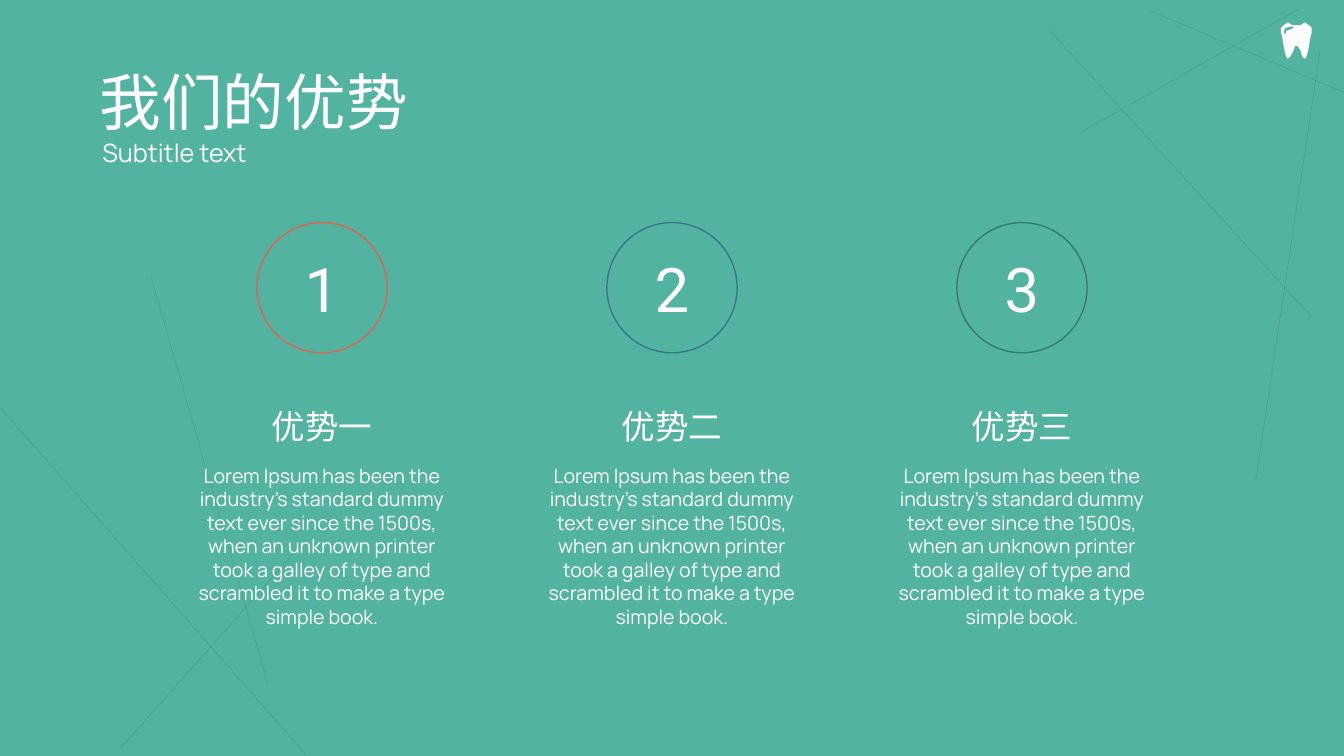
from dataclasses import dataclass

from lxml import etree
from pptx import Presentation
from pptx.dml.color import RGBColor
from pptx.enum.shapes import MSO_CONNECTOR, MSO_SHAPE
from pptx.enum.text import MSO_ANCHOR, MSO_AUTO_SIZE, PP_ALIGN
from pptx.oxml.ns import qn
from pptx.util import Pt

STRAIGHT = MSO_CONNECTOR.STRAIGHT
OVAL = MSO_SHAPE.OVAL
TOP, MIDDLE, BOTTOM = MSO_ANCHOR.TOP, MSO_ANCHOR.MIDDLE, MSO_ANCHOR.BOTTOM
LEFT, CENTER = PP_ALIGN.LEFT, PP_ALIGN.CENTER
NO_FIT = MSO_AUTO_SIZE.NONE

TITLE = "我们的优势"
SUBTITLE = "Subtitle text"
BODY = ("Lorem Ipsum has been the industry's standard dummy text ever since "
        "the 1500s, when an unknown printer took a galley of type and "
        "scrambled it to make a type simple book.")
ADVANTAGES = [  # number, heading, ring colour
    ("1", "优势一", "DE644F"),
    ("2", "优势二", "3B758A"),
    ("3", "优势三", "367A6D"),
]
DECOR_LINES = [  # x1, y1, x2, y2
    (0, 291, 219.4, 540),
    (108, 198, 191, 487.5),
    (211, 394, 87, 533.5),
    (749, 21, 936, 225.5),
    (820, 7, 960, 66),
    (774, 93.5, 927.5, 6.5),
    (897, 343, 943, 36),
]
TOOTH = [
    (920, 16.5), (923, 17.6), (926, 18), (929, 17.5), (932, 16.5),
    (935, 17.5), (936.7, 20), (937.2, 23), (936.5, 27), (934.8, 33),
    (934, 38), (933, 41), (931.7, 42), (930, 40.5), (928.6, 36.5),
    (927.3, 33.4), (926, 32.8), (924.8, 33.4), (923.5, 36.5),
    (922, 40.5), (920.5, 42), (919, 41), (918, 38), (917.3, 33),
    (915.6, 27), (915, 23), (915.4, 20), (917, 17.5),
]
TOOTH_SHINE = [(921.5, 18.7), (918.5, 20), (917.2, 23), (917.6, 25.2),
               (919.3, 22.5), (922, 21.2), (924.3, 20.2), (923.7, 19.2)]


@dataclass(frozen=True)
class Theme:
    background: str = "53B3A1"
    text: str = "FFFFFF"
    decor: str = "2A2A2A"
    decor_alpha: int = 20000
    latin: str = "Manrope"
    digits: str = "Roboto"
    chinese: str = "Noto Sans CJK SC"
    display: int = 44
    heading: int = 24
    subtitle: int = 18
    body: int = 14


T = Theme()
CENTER_X, PITCH = 480, 250
RING, RING_TOP = 93, 159
COLUMN = 202
HEADING_TOP, HEADING_H = 286, 36
BODY_TOP, BODY_H = 327.6, 126


def rgb(value):
    return RGBColor.from_string(value)


def write(tf, text, size, font, align=LEFT, anchor=TOP, spacing=None, after=0):
    tf.word_wrap = True
    tf.auto_size = NO_FIT
    tf.vertical_anchor = anchor
    p = tf.paragraphs[0]
    p.alignment = align
    p.line_spacing = spacing
    p.space_before, p.space_after = Pt(0), Pt(after)
    r = p.add_run()
    r.text = text
    r.font.size = Pt(size)
    r.font.name = font
    r.font.color.rgb = rgb(T.text)
    ea = etree.SubElement(r.font._element, qn("a:ea"))
    ea.set("typeface", T.chinese)


def add_text(s, box, *args, **kwargs):
    sp = s.shapes.add_textbox(*map(Pt, box))
    write(sp.text_frame, *args, **kwargs)


def add_decor_line(s, ends):
    line = s.shapes.add_connector(STRAIGHT, *map(Pt, ends))
    line.line.width = Pt(0.25)
    line.line.color.rgb = rgb(T.decor)
    sp_pr = line._element.spPr
    color = sp_pr.find(".//" + qn("a:srgbClr"))
    etree.SubElement(color, qn("a:alpha")).set("val", str(T.decor_alpha))
    etree.SubElement(sp_pr, qn("a:effectLst"))


def add_tooth(s):
    builder = s.shapes.build_freeform(*TOOTH[0], scale=float(Pt(1)))
    builder.add_line_segments(TOOTH[1:], close=True)
    builder.move_to(*TOOTH_SHINE[0])
    builder.add_line_segments(TOOTH_SHINE[1:], close=True)
    sp = builder.convert_to_shape()
    sp.shadow.inherit = False
    sp.fill.solid()
    sp.fill.fore_color.rgb = rgb(T.text)
    sp.line.fill.background()


def add_title(s):
    title = s.shapes.title
    title.left, title.top = Pt(64), Pt(29)
    title.width, title.height = Pt(827), Pt(74)
    write(title.text_frame, TITLE, T.display, T.chinese,
          anchor=BOTTOM, spacing=0.9)
    add_text(s, (66, 97, 827, 28), SUBTITLE, T.subtitle, T.latin, spacing=0.9)


def add_ring(s, x, number, color):
    ring = s.shapes.add_shape(OVAL, Pt(x - RING / 2), Pt(RING_TOP),
                              Pt(RING), Pt(RING))
    ring.shadow.inherit = False
    ring.fill.solid()
    ring.fill.fore_color.rgb = rgb(T.background)
    ring.line.color.rgb = rgb(color)
    ring.line.width = Pt(1)
    tf = ring.text_frame
    tf.margin_left = tf.margin_right = 0
    write(tf, number, T.display, T.digits, align=CENTER, anchor=MIDDLE)


def add_advantage(s, x, number, heading, color):
    left = x - COLUMN / 2
    add_text(s, (left, BODY_TOP, COLUMN, BODY_H), BODY, T.body, T.latin,
             align=CENTER, after=10)
    add_text(s, (left, HEADING_TOP, COLUMN, HEADING_H), heading, T.heading,
             T.latin, align=CENTER, anchor=BOTTOM, after=10)
    add_ring(s, x, number, color)


def main():
    prs = Presentation()
    prs.slide_width, prs.slide_height = Pt(960), Pt(540)
    s = prs.slides.add_slide(prs.slide_layouts[5])
    s.background.fill.solid()
    s.background.fill.fore_color.rgb = rgb(T.background)
    for ends in DECOR_LINES:
        add_decor_line(s, ends)
    add_tooth(s)
    add_title(s)
    first_x = CENTER_X - PITCH * (len(ADVANTAGES) - 1) / 2
    for i, advantage in enumerate(ADVANTAGES):
        add_advantage(s, first_x + i * PITCH, *advantage)
    prs.save("out.pptx")


if __name__ == "__main__":
    main()
